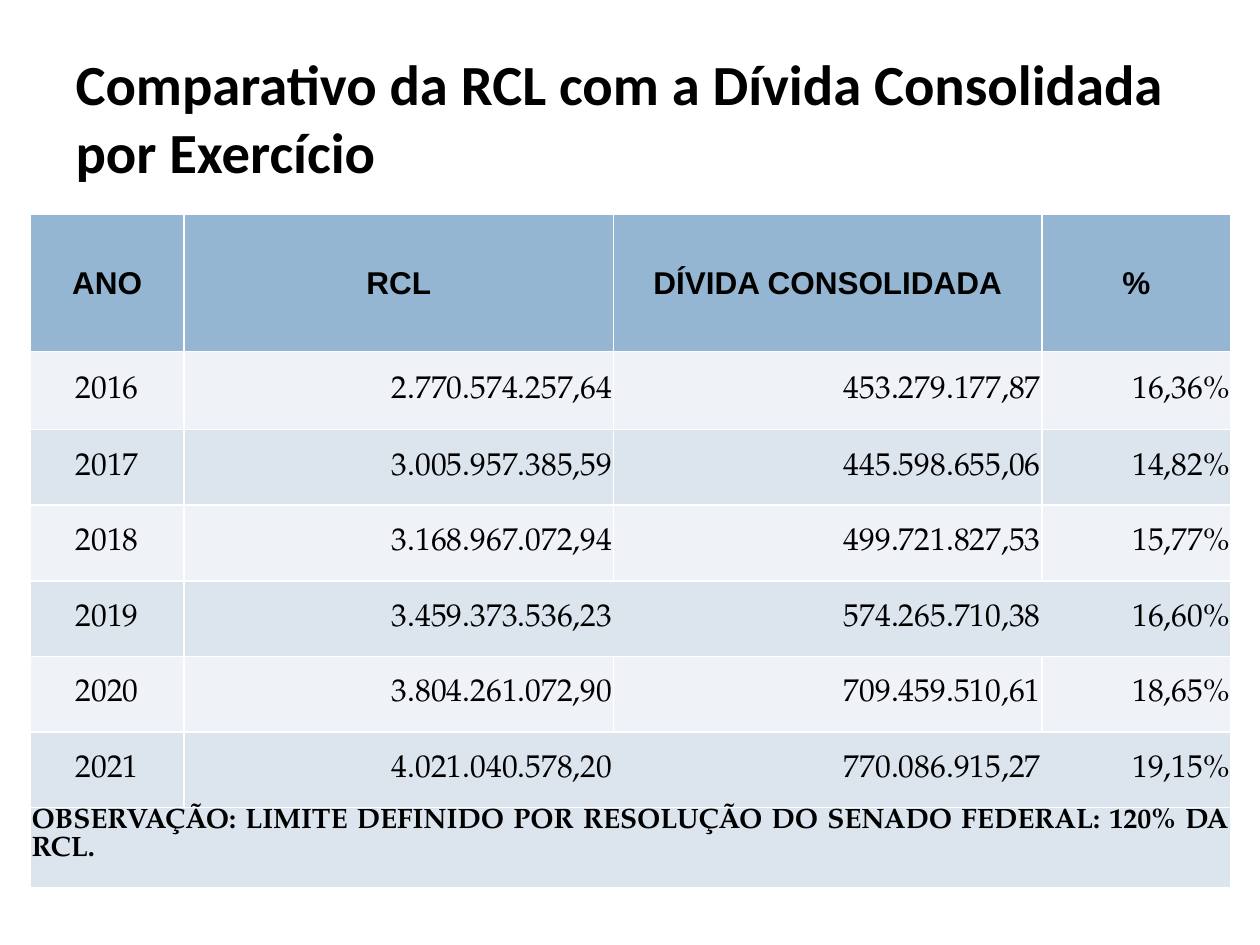
"""Build a slide comparing net current revenue with consolidated debt by year."""
from lxml import etree
from pptx import Presentation
from pptx.dml.color import RGBColor
from pptx.enum import text as t
from pptx.oxml import ns
from pptx.util import Inches, Pt

TITLE = "Comparativo da RCL com a Dívida Consolidada por Exercício"
HEADER = ("ANO", "RCL", "DÍVIDA CONSOLIDADA", "%")
YEARS = [
    ("2016", "2.770.574.257,64", "453.279.177,87", "16,36%"),
    ("2017", "3.005.957.385,59", "445.598.655,06", "14,82%"),
    ("2018", "3.168.967.072,94", "499.721.827,53", "15,77%"),
    ("2019", "3.459.373.536,23", "574.265.710,38", "16,60%"),
    ("2020", "3.804.261.072,90", "709.459.510,61", "18,65%"),
    ("2021", "4.021.040.578,20", "770.086.915,27", "19,15%"),
]
NOTE = "OBSERVAÇÃO: LIMITE DEFINIDO POR RESOLUÇÃO DO SENADO FEDERAL: 120% DA RCL."
OPEN_YEARS = ("2019", "2021")

COLUMN_WIDTHS = (1.22, 3.41, 3.4, 1.5)
ROW_HEIGHTS = (1.09, 0.62, 0.6, 0.6, 0.6, 0.6, 0.6, 0.64)

BLACK = RGBColor(0x00, 0x00, 0x00)
WHITE = RGBColor(0xFF, 0xFF, 0xFF)
BLUE = RGBColor(0x94, 0xB6, 0xD2)
LIGHT = RGBColor(0xEF, 0xF3, 0xF7)
PALE = RGBColor(0xDC, 0xE5, 0xEE)
BODY_FONT = "TeX Gyre Pagella"
CENTER, RIGHT = t.PP_ALIGN.CENTER, t.PP_ALIGN.RIGHT


def write(frame, words, font=BODY_FONT, size=18, bold=False, align=CENTER):
    para = frame.paragraphs[0]
    para.alignment = align
    para.line_spacing = 1.0
    span = para.add_run()
    span.text = words
    span.font.name = font
    span.font.size = Pt(size)
    span.font.bold = bold
    span.font.color.rgb = BLACK


def set_borders(cell, hidden=()):
    properties = cell._tc.get_or_add_tcPr()
    for side in ("lnL", "lnR", "lnT", "lnB"):
        line = etree.SubElement(properties, ns.qn(f"a:{side}"), w=str(Pt(1)))
        if side in hidden:
            etree.SubElement(line, ns.qn("a:noFill"))
        else:
            fill = etree.SubElement(line, ns.qn("a:solidFill"))
            etree.SubElement(fill, ns.qn("a:srgbClr"), val=str(WHITE))


def fill_cell(cell, words, color, hidden=(), anchor=t.MSO_ANCHOR.MIDDLE, **style):
    set_borders(cell, hidden)
    cell.fill.solid()
    cell.fill.fore_color.rgb = color
    cell.margin_left = cell.margin_right = cell.margin_top = Inches(0.01)
    cell.margin_bottom = 0
    cell.vertical_anchor = anchor
    write(cell.text_frame, words, **style)


def hidden_sides(year, column):
    if year not in OPEN_YEARS:
        return ()
    return {1: ("lnR",), 2: ("lnL", "lnR"), 3: ("lnL",)}.get(column, ())


def add_title(page):
    title = page.shapes.title
    title.left, title.top, title.width, title.height = map(Inches, (0.5, 0.3, 9, 1.25))
    frame = title.text_frame
    frame.word_wrap = True
    frame.auto_size = t.MSO_AUTO_SIZE.NONE
    frame.vertical_anchor = t.MSO_ANCHOR.MIDDLE
    write(frame, TITLE, font="Calibri", size=32.4, bold=True, align=t.PP_ALIGN.LEFT)


def add_comparison(page):
    table = page.shapes.add_table(
        len(ROW_HEIGHTS), len(COLUMN_WIDTHS), Inches(0.24), Inches(1.7),
        Inches(sum(COLUMN_WIDTHS)), Inches(sum(ROW_HEIGHTS))).table
    for column, width in zip(table.columns, COLUMN_WIDTHS):
        column.width = Inches(width)
    for row, height in zip(table.rows, ROW_HEIGHTS):
        row.height = Inches(height)

    for column, words in enumerate(HEADER):
        fill_cell(table.cell(0, column), words, BLUE, font="Arial", bold=True)
    for row, values in enumerate(YEARS, start=1):
        for column, words in enumerate(values):
            fill_cell(table.cell(row, column), words, LIGHT if row % 2 else PALE,
                      hidden_sides(values[0], column), align=RIGHT if column else CENTER)

    last = len(ROW_HEIGHTS) - 1
    note = table.cell(last, 0)
    note.merge(table.cell(last, len(COLUMN_WIDTHS) - 1))
    fill_cell(note, NOTE, PALE, anchor=t.MSO_ANCHOR.TOP, size=16, bold=True,
              align=t.PP_ALIGN.JUSTIFY)


def main():
    deck = Presentation()
    deck.slide_width, deck.slide_height = Inches(10), Inches(7.5)
    page = deck.slides.add_slide(deck.slide_layouts[5])
    add_title(page)
    add_comparison(page)
    deck.save("out.pptx")


if __name__ == "__main__":
    main()
